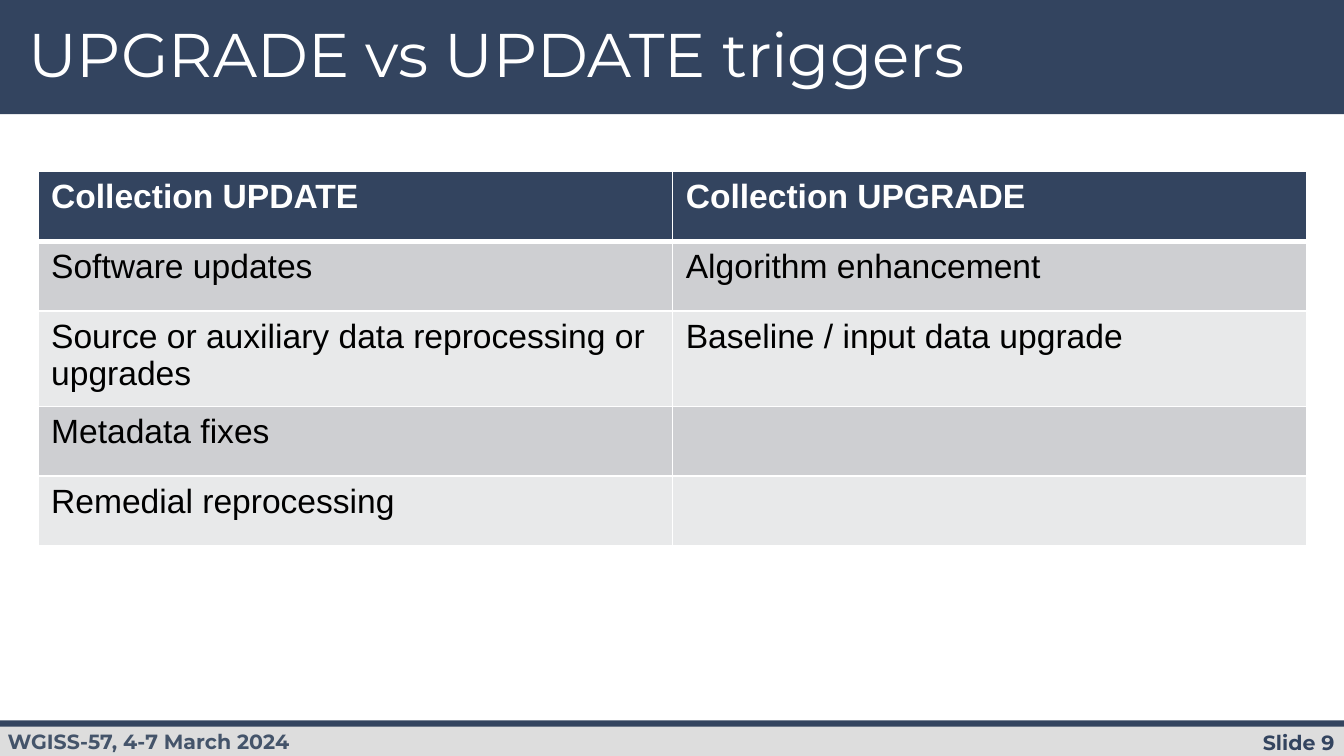
"""Build the slide comparing upgrade and update triggers."""
from lxml.etree import SubElement
from pptx import Presentation
from pptx.dml.color import RGBColor
from pptx.enum.shapes import MSO_SHAPE
from pptx.enum.text import PP_ALIGN
from pptx.oxml.ns import qn
from pptx.util import Pt

COLORS = {"navy": "33445F", "slate": "44546A", "grey": "DDDDDD", "white": "FFFFFF",
          "black": "000000", "dark": "CECFD2", "light": "E8E9EA"}
BARS = [((0, 0, 720, 61.2), "navy"), ((0, 388.3, 720, 16.7), "grey"),
        ((0, 386, 720, 3.4), "navy")]
LABELS = [
    ("Slide 9", (606, 388.1, 114, 18.7), (5, 2.9), "navy",
     {"size": Pt(11), "bold": True}, {"alignment": PP_ALIGN.RIGHT}),
    ("WGISS-57, 4-7 March 2024", (-3, 383.8, 227.5, 28), (7.2, 7.2), "slate",
     {"size": Pt(11), "bold": True}, {}),
    ("UPGRADE vs UPDATE triggers", (10.1, 10.1, 554.4, 46), (5, 2.9), "white",
     {"size": Pt(33)}, {"line_spacing": 0.9}),
]
ROWS = [
    ("Collection UPDATE", "Collection UPGRADE"),
    ("Software updates", "Algorithm enhancement"),
    ("Source or auxiliary data reprocessing or upgrades", "Baseline / input data upgrade"),
    ("Metadata fixes", ""),
    ("Remedial reprocessing", ""),
]
HEIGHTS = [37.4, 37.4, 51.1, 37.4, 37.4]
LEFT, TOP, WIDTH = 20.2, 91.9, 680


def color(name):
    return RGBColor.from_string(COLORS[name])


def paint(item, name):
    item.fill.solid()
    item.fill.fore_color.rgb = color(name)


def apply(item, values):
    for key, value in values.items():
        setattr(item, key, value)


def add_bar(slide, box, name):
    bar = slide.shapes.add_shape(MSO_SHAPE.RECTANGLE, *map(Pt, box))
    bar.shadow.inherit = False
    bar.line.fill.background()
    paint(bar, name)


def add_label(slide, text, box, inset, name, font, layout):
    frame = slide.shapes.add_textbox(*map(Pt, box)).text_frame
    side, edge = map(Pt, inset)
    apply(frame, {"word_wrap": True, "margin_left": side, "margin_right": side,
                  "margin_top": edge, "margin_bottom": edge})
    para = frame.paragraphs[0]
    para.text = text
    apply(para, layout)
    apply(para.font, {"name": "Montserrat", **font})
    para.font.color.rgb = color(name)


def add_edges(cell, widths):
    props = cell._tc.get_or_add_tcPr()
    for side, width in widths.items():
        line = SubElement(props, qn("a:ln" + side), w=str(Pt(width)))
        fill = SubElement(line, qn("a:solidFill"))
        SubElement(fill, qn("a:srgbClr"), val=COLORS["white"])


def add_grid(slide):
    size = len(ROWS), len(ROWS[0])
    table = slide.shapes.add_table(
        *size, *map(Pt, (LEFT, TOP, WIDTH, sum(HEIGHTS)))).table
    for row, height in zip(table.rows, HEIGHTS):
        row.height = Pt(height)
    for i, texts in enumerate(ROWS):
        head = i == 0
        shade = "navy" if head else ("light", "dark")[i % 2]
        edges = {"L": 1, "R": 1, "T": 3 if i == 1 else 1, "B": 3 if head else 1}
        for j, text in enumerate(texts):
            cell = table.cell(i, j)
            add_edges(cell, edges)
            paint(cell, shade)
            para = cell.text_frame.paragraphs[0]
            para.text = text
            apply(para.font, {"name": "Arial", "size": Pt(18), "bold": head})
            para.font.color.rgb = color("white" if head else "black")


def main():
    deck = Presentation()
    apply(deck, {"slide_width": Pt(720), "slide_height": Pt(405)})
    slide = deck.slides.add_slide(deck.slide_layouts[6])
    for bar in BARS:
        add_bar(slide, *bar)
    for label in LABELS:
        add_label(slide, *label)
    add_grid(slide)
    deck.save("out.pptx")


if __name__ == "__main__":
    main()
